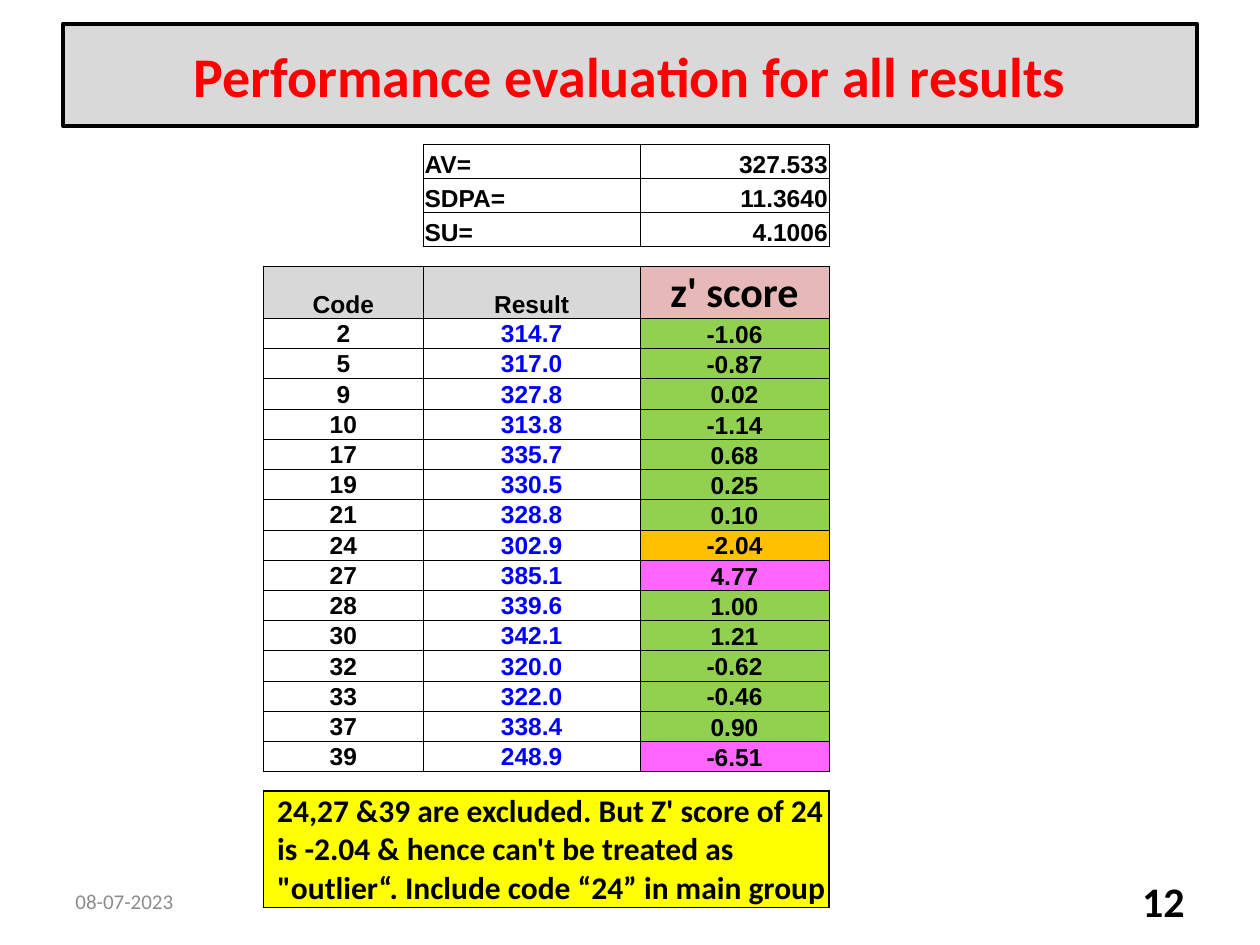
from lxml import etree
from pptx import Presentation
from pptx import util as u
from pptx.dml.color import RGBColor
from pptx.enum import shapes, text
from pptx.oxml import ns

deck = Presentation()
deck.slide_width, deck.slide_height = u.Inches(10), u.Inches(7.5)
slide = deck.slides.add_slide(deck.slide_layouts[6])

# Grid: 20 columns by 40 rows
COL, ROW = deck.slide_width / 20, deck.slide_height / 40
LEFT, MID, RIGHT = text.PP_ALIGN.LEFT, text.PP_ALIGN.CENTER, text.PP_ALIGN.RIGHT
BASE, HALF = text.MSO_ANCHOR.BOTTOM, text.MSO_ANCHOR.MIDDLE
hue = RGBColor.from_string


def write(frame, words, size, face, tint, align, bold=True):
    frame.word_wrap = True
    para = frame.paragraphs[0]
    para.alignment = align
    run = para.add_run()
    run.text = words
    font = run.font
    font.size, font.name, font.bold = u.Pt(size), face, bold
    font.color.rgb = hue(tint)


def edge(cell, sides, width=0.5):
    props = cell._tc.get_or_add_tcPr()
    for i, side in enumerate(sides):
        line = etree.Element(ns.qn("a:ln" + side), w=str(u.Pt(width)))
        fill = etree.SubElement(line, ns.qn("a:solidFill"))
        etree.SubElement(fill, ns.qn("a:srgbClr"), val="000000")
        props.insert(i, line)


# Title bar
bar = slide.shapes.add_shape(
    shapes.MSO_SHAPE.RECTANGLE, *map(int, (COL, ROW, 18 * COL, 4.33 * ROW)))
bar.shadow.inherit = False
bar.fill.solid()
bar.fill.fore_color.rgb = hue("D9D9D9")
bar.line.color.rgb = hue("000000")
bar.line.width = u.Pt(2.25)
bar.text_frame.vertical_anchor = HALF
write(bar.text_frame, "Performance evaluation for all results", 32, "Calibri", "FF0000", MID)

# Table content
stats = [("AV=", "327.533"), ("SDPA=", "11.3640"), ("SU=", "4.1006")]
heads = [("Code", 14, "Arial", "D8D8D8"), ("Result", 14, "Arial", "D8D8D8"),
         ("z' score", 24, "Calibri", "E6B9B8")]
scores = [
    ("2", "314.7", "-1.06"), ("5", "317.0", "-0.87"), ("9", "327.8", "0.02"),
    ("10", "313.8", "-1.14"), ("17", "335.7", "0.68"), ("19", "330.5", "0.25"),
    ("21", "328.8", "0.10"), ("24", "302.9", "-2.04"), ("27", "385.1", "4.77"),
    ("28", "339.6", "1.00"), ("30", "342.1", "1.21"), ("32", "320.0", "-0.62"),
    ("33", "322.0", "-0.46"), ("37", "338.4", "0.90"), ("39", "248.9", "-6.51"),
]
note = ("24,27 &39 are excluded. But Z' score of 24 is -2.04 & hence can't be "
        "treated as \"outlier“. Include code “24” in main group")

# Table frame, without a banded style
wides = [2.54, 3.44, 3]
highs = [1.44] * len(stats) + [0.64, 1.92] + [1.28] * len(scores) + [0.69, 4.27]
table = slide.shapes.add_table(
    len(highs), len(wides), *map(int, (4.18 * COL, 6.13 * ROW, sum(wides) * COL, sum(highs) * ROW))).table
table.first_row = table.horz_banding = False
style = table._tbl.tblPr.find(ns.qn("a:tableStyleId"))
style.text = "{2D5ABB26-0587-4C30-8999-92F81FD0307C}"
for col, wide in zip(table.columns, wides):
    col.width = int(wide * COL)
for row, high in zip(table.rows, highs):
    row.height = int(high * ROW)

# Each filled cell: row, column, words, size, face, tint, align, anchor, fill
cells = []
for r, (name, value) in enumerate(stats):
    cells.append((r, 1, name, 14, "Arial", "000000", LEFT, BASE, None))
    cells.append((r, 2, value, 14, "Arial", "000000", RIGHT, BASE, None))
top = len(stats) + 1
for c, (name, size, face, fill) in enumerate(heads):
    cells.append((top, c, name, size, face, "000000", MID, BASE, fill))
for r, (code, value, score) in enumerate(scores, top + 1):
    off = abs(float(score))
    grade = "92D050" if off <= 2 else "FFC000" if off < 3 else "FF66FF"
    cells.append((r, 0, code, 14, "Arial", "000000", MID, HALF, "FFFFFF"))
    cells.append((r, 1, value, 14, "Arial", "0000FF", MID, HALF, "FFFFFF"))
    cells.append((r, 2, score, 14, "Arial", "000000", MID, BASE, grade))
last = len(highs) - 1
table.cell(last, 0).merge(table.cell(last, 2))
cells.append((last, 0, note, 18, "Calibri", "000000", LEFT, BASE, "FFFF00"))

for r, c, words, size, face, tint, align, anchor, fill in cells:
    cell = table.cell(r, c)
    cell.margin_left = cell.margin_right = cell.margin_top = u.Inches(0.01)
    cell.margin_bottom = 0
    cell.vertical_anchor = anchor
    write(cell.text_frame, words, size, face, tint, align)
    if fill:
        cell.fill.solid()
        cell.fill.fore_color.rgb = hue(fill)
    edge(cell, "LRTB", 1 if r == last else 0.5)
table.cell(last, 0).text_frame.paragraphs[0]._p.get_or_add_pPr().set("marL", str(u.Inches(0.1)))
for c in (1, 2):
    edge(table.cell(last, c), "RTB", 1)

# Empty cells stay low so that the gap rows keep their height
blanks = [(r, 0) for r in range(len(stats))]
blanks += [(r, c) for r in (top - 1, last - 1) for c in range(3)]
for r, c in blanks:
    end = table.cell(r, c).text_frame.paragraphs[0]._p.get_or_add_endParaRPr()
    end.set("sz", "300")

# Date and page number
for x, words, size, tint, align, bold in [
        (1, "08-07-2023", 12, "8C8C8C", LEFT, False),
        (14.33, "12", 24, "000000", RIGHT, True)]:
    box = slide.shapes.add_textbox(*map(int, (x * COL, 37.07 * ROW, 4.67 * COL, 2.13 * ROW)))
    box.text_frame.vertical_anchor = HALF
    write(box.text_frame, words, size, "Calibri", tint, align, bold)

deck.save("out.pptx")
